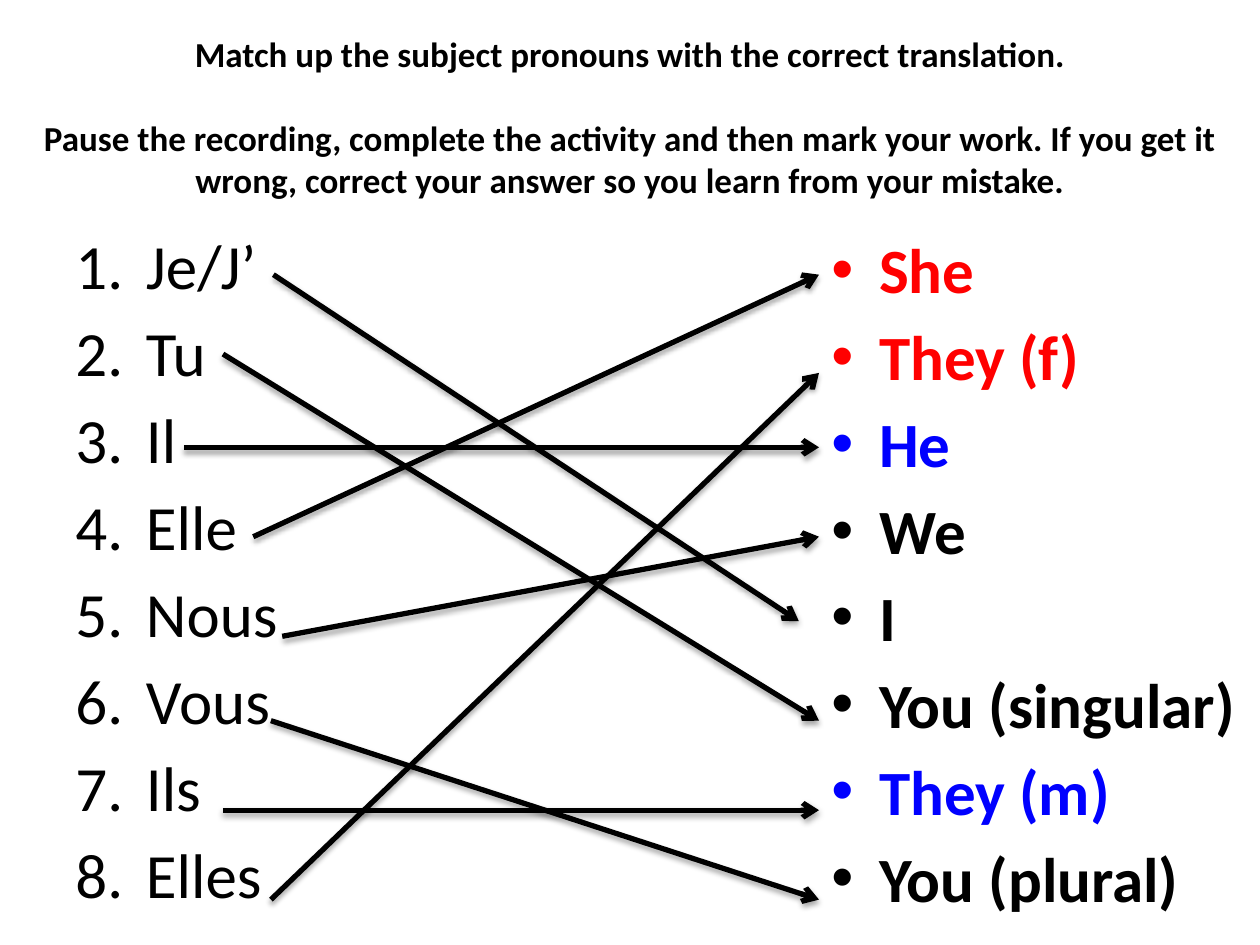
from lxml import etree
from pptx import Presentation
from pptx import util as u
from pptx.dml.color import RGBColor
from pptx.enum import shapes, text
from pptx.oxml import parse_xml
from pptx.oxml.ns import nsdecls, qn

# Content
COLORS = {"black": "000000", "feminine": "FF0000", "masculine": "0000FF"}
TITLE = [
    "Match up the subject pronouns with the correct translation.",
    "Pause the recording, complete the activity and then mark your work. "
    "If you get it wrong, correct your answer so you learn from your mistake.",
]
# Pronoun, its translation, arrow start x and y
PRONOUNS = [
    ("Je/J’", "I", 2.17, 2.18),
    ("Tu", "You (singular)", 1.77, 2.81),
    ("Il", "He", 1.46, 3.55),
    ("Elle", "She", 2.01, 4.26),
    ("Nous", "We", 2.24, 5.05),
    ("Vous", "You (plural)", 2.15, 5.72),
    ("Ils", "They (m)", 1.77, 6.43),
    ("Elles", "They (f)", 2.15, 7.14),
]
# Translation in reading order: colour, arrow tip x and y
TRANSLATIONS = {
    "She": ("feminine", 6.5, 2.18),
    "They (f)": ("feminine", 6.5, 2.96),
    "He": ("masculine", 6.5, 3.55),
    "We": ("black", 6.5, 4.26),
    "I": ("black", 6.34, 4.93),
    "You (singular)": ("black", 6.5, 5.72),
    "They (m)": ("masculine", 6.5, 6.43),
    "You (plural)": ("black", 6.5, 7.14),
}
NUMBERED = {"buFont": {"typeface": "+mj-lt"}, "buAutoNum": {"type": "arabicPeriod"}}
BULLETED = {"buFont": {"typeface": "Arial"}, "buChar": {"char": "•"}}
SHADOW = (
    f'<a:effectLst {nsdecls("a")}><a:outerShdw blurRad="{u.Pt(3.1)}" dist="{u.Pt(1.8)}" '
    'dir="5400000" rotWithShape="0"><a:srgbClr val="000000"><a:alpha val="35000"/>'
    "</a:srgbClr></a:outerShdw></a:effectLst>"
)


def color(name):
    return RGBColor.from_string(COLORS[name])


def place(shape, left, top, width, height):
    box = {"left": left, "top": top, "width": width, "height": height}
    for name, value in box.items():
        setattr(shape, name, u.Inches(value))


def write(paragraph, words, color_name, size, bold):
    run = paragraph.add_run()
    run.text = words
    for name, value in {"name": "Calibri", "size": u.Pt(size), "bold": bold}.items():
        setattr(run.font, name, value)
    run.font.color.rgb = color(color_name)


def paragraphs(frame, count):
    return [frame.paragraphs[0]] + [frame.add_paragraph() for _ in range(count - 1)]


def add_list(slide, box, items, indent, marker, bold):
    shape = slide.shapes.add_textbox(0, 0, 0, 0)
    place(shape, *box)
    frame = shape.text_frame
    frame.word_wrap = True
    for paragraph, (words, color_name) in zip(paragraphs(frame, len(items)), items):
        paragraph.space_before = u.Pt(6.5)
        write(paragraph, words, color_name, 36, bold)
        properties = paragraph._p.get_or_add_pPr()
        properties.set("marL", str(u.Inches(indent)))
        properties.set("indent", str(-u.Inches(indent)))
        for tag, attributes in marker.items():
            etree.SubElement(properties, qn(f"a:{tag}"), attributes)


def add_arrow(slide, *ends):
    arrow = slide.shapes.add_connector(
        shapes.MSO_CONNECTOR.STRAIGHT, *(u.Inches(value) for value in ends))
    arrow.line.width = u.Pt(3)
    arrow.line.color.rgb = color("black")
    etree.SubElement(arrow.line._get_or_add_ln(), qn("a:tailEnd"), {"type": "arrow"})
    arrow._element.spPr.append(parse_xml(SHADOW))


def main():
    presentation = Presentation()
    presentation.slide_width, presentation.slide_height = u.Inches(10), u.Inches(7.5)
    slide = presentation.slides.add_slide(presentation.slide_layouts[5])

    # Instructions
    title = slide.shapes.title
    place(title, 0, 0.3, 10, 1.25)
    frame = title.text_frame
    frame.word_wrap = True
    frame.auto_size = text.MSO_AUTO_SIZE.NONE
    frame.vertical_anchor = text.MSO_ANCHOR.MIDDLE
    for paragraph, words in zip(paragraphs(frame, len(TITLE)), TITLE):
        paragraph.alignment = text.PP_ALIGN.CENTER
        write(paragraph, words, "black", 20, True)
    frame.paragraphs[1].space_before = u.Pt(24)

    # Word lists
    pronouns = [(row[0], "black") for row in PRONOUNS]
    translations = [(words, row[0]) for words, row in TRANSLATIONS.items()]
    add_list(slide, (0.5, 1.75, 4.42, 4.95), pronouns, 0.56, NUMBERED, False)
    add_list(slide, (6.5, 1.78, 3.5, 4.95), translations, 0.38, BULLETED, True)

    # Matching arrows
    for _, translation, left, top in PRONOUNS:
        add_arrow(slide, left, top, *TRANSLATIONS[translation][1:])

    presentation.save("out.pptx")


if __name__ == "__main__":
    main()
